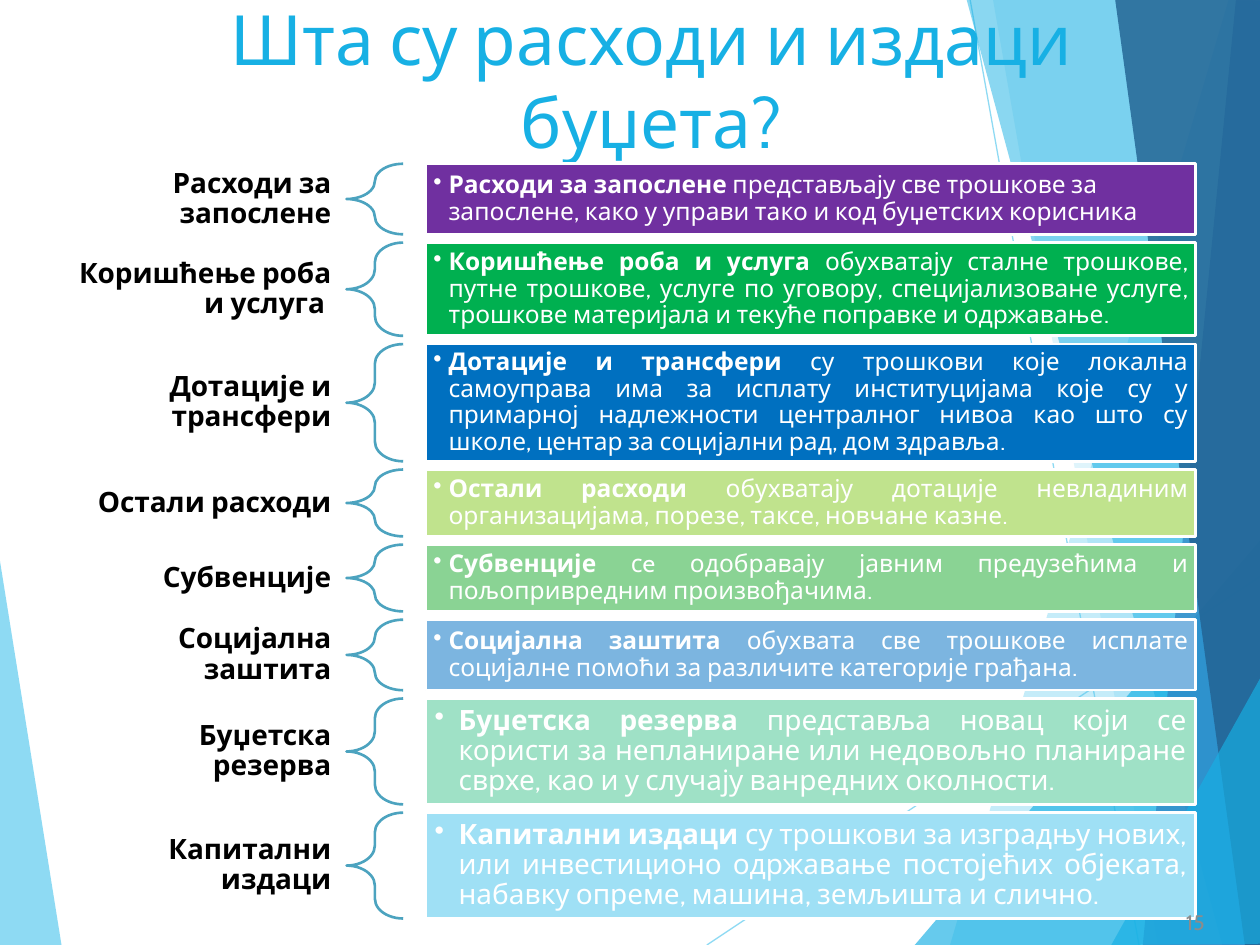
from lxml import etree
from pptx import Presentation
from pptx.dml.color import RGBColor
from pptx.enum import shapes, text
from pptx.oxml.ns import qn
from pptx.util import Inches, Pt

FONT = "Cabin"
WHITE = RGBColor(0xFF, 0xFF, 0xFF)
BLACK = RGBColor(0, 0, 0)
GRAY = RGBColor(0x8C, 0x8C, 0x8C)
SKY = RGBColor(0x5F, 0xCB, 0xEF)
CYAN = RGBColor(0x17, 0xB0, 0xE4)
BLUE = RGBColor(0x2E, 0x83, 0xC3)
NAVY = RGBColor(0x22, 0x62, 0x92)
BRACE = RGBColor(0x4C, 0xA3, 0xBF)
PURPLE = RGBColor(0x70, 0x30, 0xA0)
GREEN = RGBColor(0x00, 0xB0, 0x50)
ROYAL = RGBColor(0x00, 0x70, 0xC0)
LIME = RGBColor(0xC0, 0xE3, 0x8D)
LEAF = RGBColor(0x8A, 0xD3, 0x94)
STEEL = RGBColor(0x7C, 0xB5, 0xE0)
MINT = RGBColor(0x9F, 0xE1, 0xC6)
ICE = RGBColor(0x9F, 0xE0, 0xF5)

RAYS = [((5.61, 7.5), (10.01, 4.57)), ((7.7, 0), (9.04, 7.5))]
FACETS = [
    (SKY, 70, [(-0.01, 4.39), (0.49, 7.51), (-0.01, 7.5)]),
    (SKY, 36, [(9.75, 0), (7.54, 7.5), (10.02, 7.51), (10.01, 0.01)]),
    (SKY, 20, [(7.88, -0.01), (9.19, 7.5), (10.01, 7.5), (10.01, -0.01)]),
    (CYAN, 66, [(7.26, 7.5), (10, 4.29), (10.01, 7.5)]),
    (CYAN, 50, [(7.67, -0.01), (9.7, 7.5), (10.01, 7.49), (10.01, -0.01)]),
    (BLUE, 70, [(9.81, -0.01), (9.07, 7.5), (10.01, 7.5), (10, -0.01)]),
    (NAVY, 82, [(8.85, -0.01), (9.88, 7.5), (10.02, 7.5), (10, -0.01)]),
    (CYAN, 66, [(8.82, 7.5), (10.02, 5.35), (10.02, 7.49)]),
]

TOP, BOTTOM = 1.3, 7.29
ROWS = [
    (0.56, 0.56, PURPLE, 14, "Расходи за запослене", "Расходи за запослене ",
     "представљају све трошкове за запослене, како у управи тако и код буџетских корисника"),
    (0.74, 0.56, GREEN, 14, "Коришћење роба и услуга ", "Коришћење роба и услуга ",
     "обухватају сталне трошкове, путне трошкове, услуге по уговору, специјализоване услуге, "
     "трошкове материјала и текуће поправке и одржавање."),
    (0.93, 0.56, ROYAL, 14, "Дотације и трансфери", "Дотације и трансфери ",
     "су трошкови које локална самоуправа има за исплату институцијама које су у примарној "
     "надлежности централног нивоа као што су школе, центар за социјални рад, дом здравља. "),
    (0.53, 0.35, LIME, 14, "Остали расходи", "Остали расходи ",
     "обухватају дотације невладиним организацијама, порезе, таксе, новчане казне."),
    (0.53, 0.35, LEAF, 14, "Субвенције", "Субвенције",
     " сe одобравају јавним предузећима и пољопривредним произвођачима. "),
    (0.56, 0.56, STEEL, 14, "Социјална заштита", "Социјална заштита ",
     "обухвата све трошкове исплате социјалне помоћи за различите категорије грађана."),
    (0.84, 0.35, MINT, 16, "Буџетска резерва", "Буџетска резерва ",
     "представља новац који се користи за непланиране или недовољно планиране сврхе, "
     "као и у случају ванредних околности."),
    (0.84, 0.35, ICE, 16, "Капитални издаци", "Капитални издаци ",
     "су трошкови за изградњу нових, или инвестиционо одржавање постојећих објеката, "
     "набавку опреме, машина, земљишта и слично."),
]


def set_opacity(shape, percent):
    color = shape._element.spPr.find(".//" + qn("a:srgbClr"))
    etree.SubElement(color, qn("a:alpha"), val=str(percent * 1000))


def add_ray(slide, start, end):
    ray = slide.shapes.add_connector(
        shapes.MSO_CONNECTOR.STRAIGHT, *map(Inches, start + end))
    ray.line.color.rgb = SKY
    ray.line.width = Pt(0.75)
    set_opacity(ray, 70)
    etree.SubElement(ray._element.spPr, qn("a:effectLst"))


def add_facet(slide, color, opacity, points):
    corners = [(Inches(x), Inches(y)) for x, y in points]
    builder = slide.shapes.build_freeform(*corners[0])
    builder.add_line_segments(corners[1:], close=True)
    facet = builder.convert_to_shape()
    facet.shadow.inherit = False
    facet.fill.solid()
    facet.fill.fore_color.rgb = color
    facet.line.fill.background()
    set_opacity(facet, opacity)


def prepare_frame(shape, horizontal=0.1, vertical=0.05):
    frame = shape.text_frame
    frame.word_wrap = True
    frame.vertical_anchor = text.MSO_ANCHOR.MIDDLE
    frame.margin_left = frame.margin_right = Inches(horizontal)
    frame.margin_top = frame.margin_bottom = Inches(vertical)
    return frame.paragraphs[0]


def set_font(paragraph, size, color, bold=None):
    paragraph.font.name = FONT
    paragraph.font.size = Pt(size)
    paragraph.font.color.rgb = color
    paragraph.font.bold = bold


def add_text(slide, box, words, size, color, alignment, **margins):
    shape = slide.shapes.add_textbox(*map(Inches, box))
    paragraph = prepare_frame(shape, **margins)
    paragraph.text = words
    paragraph.alignment = alignment
    set_font(paragraph, size, color)
    return paragraph


def add_label(slide, middle, height, words):
    paragraph = add_text(slide, (0.5, middle - height / 2, 2.25, height), words, 16, BLACK,
                         text.PP_ALIGN.RIGHT, horizontal=0.12, vertical=0.04)
    paragraph.line_spacing = 0.9
    paragraph.font.bold = True


def add_brace(slide, top, height):
    brace = slide.shapes.add_shape(
        shapes.MSO_SHAPE.LEFT_BRACE, Inches(2.75), Inches(top), Inches(0.45), Inches(height))
    brace.shadow.inherit = False
    brace.adjustments[0] = 0.35
    brace.fill.background()
    brace.line.color.rgb = BRACE
    brace.line.width = Pt(1.5)


def add_description(slide, top, height, color, size, term, definition, alignment):
    bar = slide.shapes.add_shape(
        shapes.MSO_SHAPE.RECTANGLE, Inches(3.38), Inches(top), Inches(6.11), Inches(height))
    bar.shadow.inherit = False
    bar.fill.solid()
    bar.fill.fore_color.rgb = color
    bar.line.color.rgb = WHITE
    bar.line.width = Pt(1.5)

    margin, indent = (0.06, 0.12) if size == 14 else (0.07, 0.19)
    paragraph = prepare_frame(bar, margin, margin)
    paragraph.alignment = alignment
    paragraph.level = 1
    paragraph.line_spacing = 0.9
    properties = paragraph._p.get_or_add_pPr()
    properties.set("marL", str(Inches(indent)))
    properties.set("indent", str(-Inches(indent)))
    etree.SubElement(properties, qn("a:buChar"), char="•")
    set_font(paragraph, size, WHITE)
    for words, bold in ((term, True), (definition, False)):
        run = paragraph.add_run()
        run.text = words
        run.font.bold = bold


def add_rows(slide):
    gap = (BOTTOM - TOP - sum(row[0] for row in ROWS)) / (len(ROWS) - 1)
    top = TOP
    for index, (height, label_height, color, size, label, term, definition) in enumerate(ROWS):
        alignment = text.PP_ALIGN.JUSTIFY if index else text.PP_ALIGN.LEFT
        add_label(slide, top + height / 2, label_height, label)
        add_brace(slide, top, height)
        add_description(slide, top, height, color, size, term, definition, alignment)
        top += height + gap


def main():
    presentation = Presentation()
    presentation.slide_width = Inches(10)
    presentation.slide_height = Inches(7.5)
    slide = presentation.slides.add_slide(presentation.slide_layouts[6])
    for start, end in RAYS:
        add_ray(slide, start, end)
    for color, opacity, points in FACETS:
        add_facet(slide, color, opacity, points)
    add_text(slide, (0.67, 0.29, 9, 0.68), "Шта су расходи и издаци буџета?",
             39.6, CYAN, text.PP_ALIGN.CENTER)
    add_rows(slide)
    add_text(slide, (7.33, 7.12, 2.33, 0.4), "15", 12, GRAY, text.PP_ALIGN.RIGHT)
    presentation.save("out.pptx")


if __name__ == "__main__":
    main()
